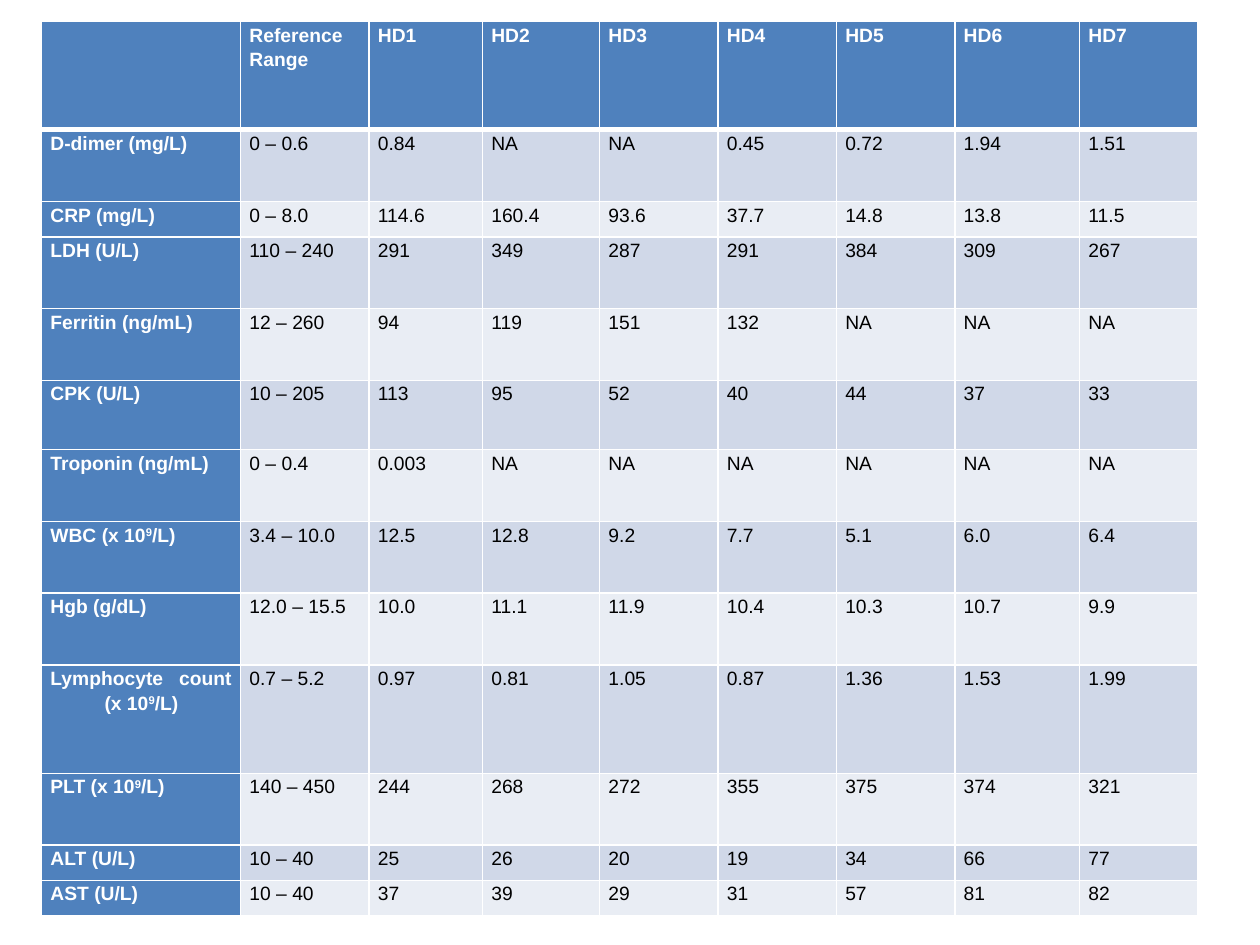
from lxml import etree
from pptx import Presentation
from pptx import util as u
from pptx.dml.color import RGBColor
from pptx.enum import text
from pptx.oxml import ns

WHITE = RGBColor(0xFF, 0xFF, 0xFF)
BLACK = RGBColor(0, 0, 0)
HEADER_BLUE = RGBColor(0x4F, 0x81, 0xBD)
BANDS = (RGBColor(0xE9, 0xED, 0xF4), RGBColor(0xD0, 0xD8, 0xE8))

COLUMN_WIDTHS = [1.58, 1.02, 0.9, 0.93, 0.94, 0.94, 0.94, 0.99, 0.94]
ROW_HEIGHTS = [0.86, 0.57, 0.28, 0.57, 0.57, 0.55, 0.57, 0.57, 0.57, 0.86, 0.57, 0.28, 0.28]
HANGING_INDENT = u.Inches(0.43)

LAB_RESULTS = [
    ["", "Reference Range", "HD1", "HD2", "HD3", "HD4", "HD5", "HD6", "HD7"],
    ["D-dimer (mg/L)", "0 – 0.6", "0.84", "NA", "NA", "0.45", "0.72", "1.94", "1.51"],
    ["CRP (mg/L)", "0 – 8.0", "114.6", "160.4", "93.6", "37.7", "14.8", "13.8", "11.5"],
    ["LDH (U/L)", "110 – 240", "291", "349", "287", "291", "384", "309", "267"],
    ["Ferritin (ng/mL)", "12 – 260", "94", "119", "151", "132", "NA", "NA", "NA"],
    ["CPK (U/L)", "10 – 205", "113", "95", "52", "40", "44", "37", "33"],
    ["Troponin (ng/mL)", "0 – 0.4", "0.003", "NA", "NA", "NA", "NA", "NA", "NA"],
    ["WBC (x 10^9^/L)", "3.4 – 10.0", "12.5", "12.8", "9.2", "7.7", "5.1", "6.0", "6.4"],
    ["Hgb (g/dL)", "12.0 – 15.5", "10.0", "11.1", "11.9", "10.4", "10.3", "10.7", "9.9"],
    ["Lymphocyte count (x 10^9^/L)", "0.7 – 5.2", "0.97", "0.81", "1.05", "0.87", "1.36", "1.53", "1.99"],
    ["PLT (x 10^9^/L)", "140 – 450", "244", "268", "272", "355", "375", "374", "321"],
    ["ALT (U/L)", "10 – 40", "25", "26", "20", "19", "34", "66", "77"],
    ["AST (U/L)", "10 – 40", "37", "39", "29", "31", "57", "81", "82"],
]


def set_borders(cell, top, bottom):
    properties = cell._tc.get_or_add_tcPr()
    for side, points in (("lnL", 1), ("lnR", 1), ("lnT", top), ("lnB", bottom)):
        line = etree.SubElement(properties, ns.qn(f"a:{side}"), w=str(u.Pt(points)))
        fill = etree.SubElement(line, ns.qn("a:solidFill"))
        etree.SubElement(fill, ns.qn("a:srgbClr"), val=str(WHITE))


def write_cell(cell, content, color, bold):
    cell.margin_left = cell.margin_right = u.Inches(0.07)
    cell.margin_top = cell.margin_bottom = 0
    para = cell.text_frame.paragraphs[0]
    para.alignment = text.PP_ALIGN.JUSTIFY
    para.line_spacing = 1.15
    para.font.size = u.Pt(11)
    if content.startswith("Lymphocyte"):
        properties = para._p.get_or_add_pPr()
        properties.set("marL", str(HANGING_INDENT))
        properties.set("indent", str(-HANGING_INDENT))
    for index, part in enumerate(content.split("^") if content else []):
        span = para.add_run()
        span.text = part
        span.font.name = "Arial"
        span.font.size = u.Pt(11)
        span.font.bold = bold
        span.font.color.rgb = color
        if index % 2:
            span.font._element.set("baseline", "30000")


def add_lab_table(page, left, top, width, height):
    table = page.shapes.add_table(len(ROW_HEIGHTS), len(COLUMN_WIDTHS), left, top, width, height).table
    for column, size in zip(table.columns, COLUMN_WIDTHS):
        column.width = u.Inches(size)
    for row, size in zip(table.rows, ROW_HEIGHTS):
        row.height = u.Inches(size)
    for row_index, values in enumerate(LAB_RESULTS):
        for column_index, value in enumerate(values):
            cell = table.cell(row_index, column_index)
            heading = row_index == 0 or column_index == 0
            set_borders(cell, 3 if row_index == 1 else 1, 3 if row_index == 0 else 1)
            cell.fill.solid()
            cell.fill.fore_color.rgb = HEADER_BLUE if heading else BANDS[row_index % 2]
            write_cell(cell, value, WHITE if heading else BLACK, heading)


def main():
    deck = Presentation()
    deck.slide_width, deck.slide_height = u.Inches(10), u.Inches(7.5)
    page = deck.slides.add_slide(deck.slide_layouts[6])
    add_lab_table(page, u.Inches(0.33), u.Inches(0.17), u.Inches(9.17), u.Inches(7.08))
    deck.save("out.pptx")


if __name__ == "__main__":
    main()
